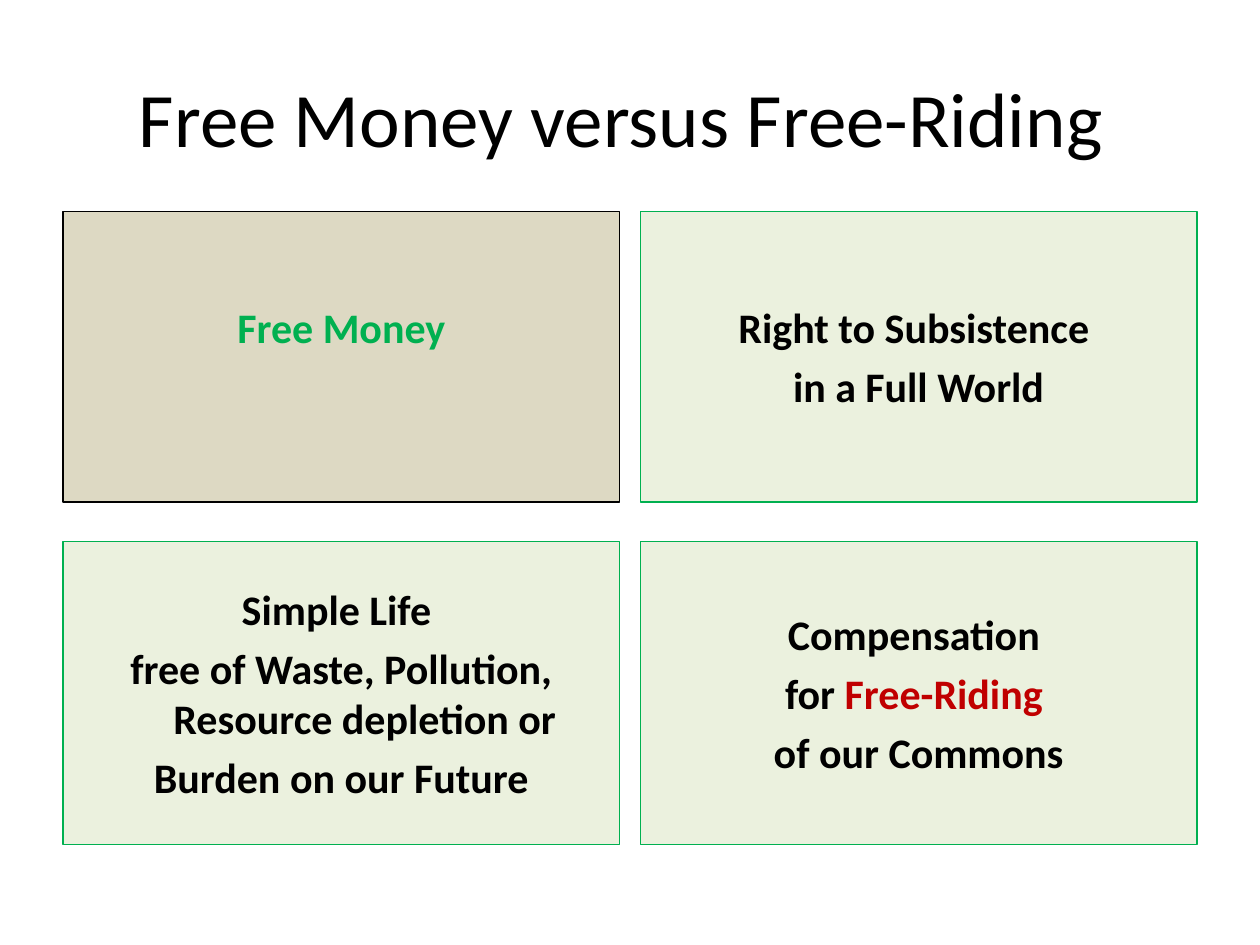
import pptx
import pptx.dml.color
import pptx.enum.shapes
import pptx.enum.text
import pptx.util

Cm, Pt = pptx.util.Cm, pptx.util.Pt

COLORS = {
    "text": "000000",
    "green": "00B050",
    "red": "C00000",
    "beige": "DDD9C3",
    "pale": "EBF1DE",
}
FONT = "Calibri"
TITLE = "Free Money versus Free-Riding "

# Each line of a panel is a list of (words, colour) pieces.
PANELS = [
    {"row": 0, "column": 0, "fill": "beige", "border": "text", "raised": 1.2,
     "lines": [[("Free Money", "green")]]},
    {"row": 1, "column": 0, "fill": "pale", "border": "green", "hanging": 0.95,
     "lines": [[("Simple Life ", "text")],
               [("free of Waste, Pollution, Resource depletion or", "text")],
               [("Burden on our Future", "text")]]},
    {"row": 0, "column": 1, "fill": "pale", "border": "green",
     "lines": [[("Right to Subsistence ", "text")],
               [("in a Full World", "text")]]},
    {"row": 1, "column": 1, "fill": "pale", "border": "green", "hanging": 0.95,
     "lines": [[("Compensation ", "text")],
               [("for ", "text"), ("Free-Riding ", "red")],
               [("of our Commons", "text")]]},
]

# Centimetres
SLIDE_WIDTH, SLIDE_HEIGHT = 25.4, 19.05
MARGIN = 1.27
COLUMN_GAP = 0.42
COLUMN_WIDTH = (SLIDE_WIDTH - 2 * MARGIN - COLUMN_GAP) / 2
ROWS = [(4.26, 5.86), (10.92, 6.1)]  # top, height


def rgb(name):
    return pptx.dml.color.RGBColor.from_string(COLORS[name])


def write_lines(frame, lines, size, bold=False, space_before=0, hanging=0):
    frame.word_wrap = True
    frame.vertical_anchor = pptx.enum.text.MSO_ANCHOR.MIDDLE
    for number, pieces in enumerate(lines):
        paragraph = frame.add_paragraph() if number else frame.paragraphs[0]
        paragraph.alignment = pptx.enum.text.PP_ALIGN.CENTER
        paragraph.space_before = Pt(space_before)
        paragraph.font.name = FONT
        paragraph.font.size = Pt(size)
        paragraph.font.bold = bold
        if hanging:
            properties = paragraph._p.get_or_add_pPr()
            properties.set("marL", str(Cm(hanging)))
            properties.set("indent", str(-Cm(hanging)))
        for words, color in pieces:
            run = paragraph.add_run()
            run.text = words
            run.font.color.rgb = rgb(color)


def add_panel(slide, panel):
    top, height = ROWS[panel["row"]]
    left = MARGIN + panel["column"] * (COLUMN_WIDTH + COLUMN_GAP)
    box = slide.shapes.add_shape(
        pptx.enum.shapes.MSO_SHAPE.RECTANGLE,
        Cm(left), Cm(top), Cm(COLUMN_WIDTH), Cm(height))
    box.shadow.inherit = False
    box.fill.solid()
    box.fill.fore_color.rgb = rgb(panel["fill"])
    box.line.color.rgb = rgb(panel["border"])
    box.line.width = Pt(0.75)
    box.text_frame.margin_bottom = Cm(0.13 + panel.get("raised", 0))
    write_lines(box.text_frame, panel["lines"], 24, bold=True,
                space_before=4.8, hanging=panel.get("hanging", 0))


def main():
    deck = pptx.Presentation()
    deck.slide_width, deck.slide_height = Cm(SLIDE_WIDTH), Cm(SLIDE_HEIGHT)
    slide = deck.slides.add_slide(deck.slide_layouts[6])
    title = slide.shapes.add_textbox(
        Cm(MARGIN), Cm(0.76), Cm(SLIDE_WIDTH - 2 * MARGIN), Cm(3.18))
    write_lines(title.text_frame, [[(TITLE, "text")]], 44)
    for panel in PANELS:
        add_panel(slide, panel)
    deck.save("out.pptx")


if __name__ == "__main__":
    main()
